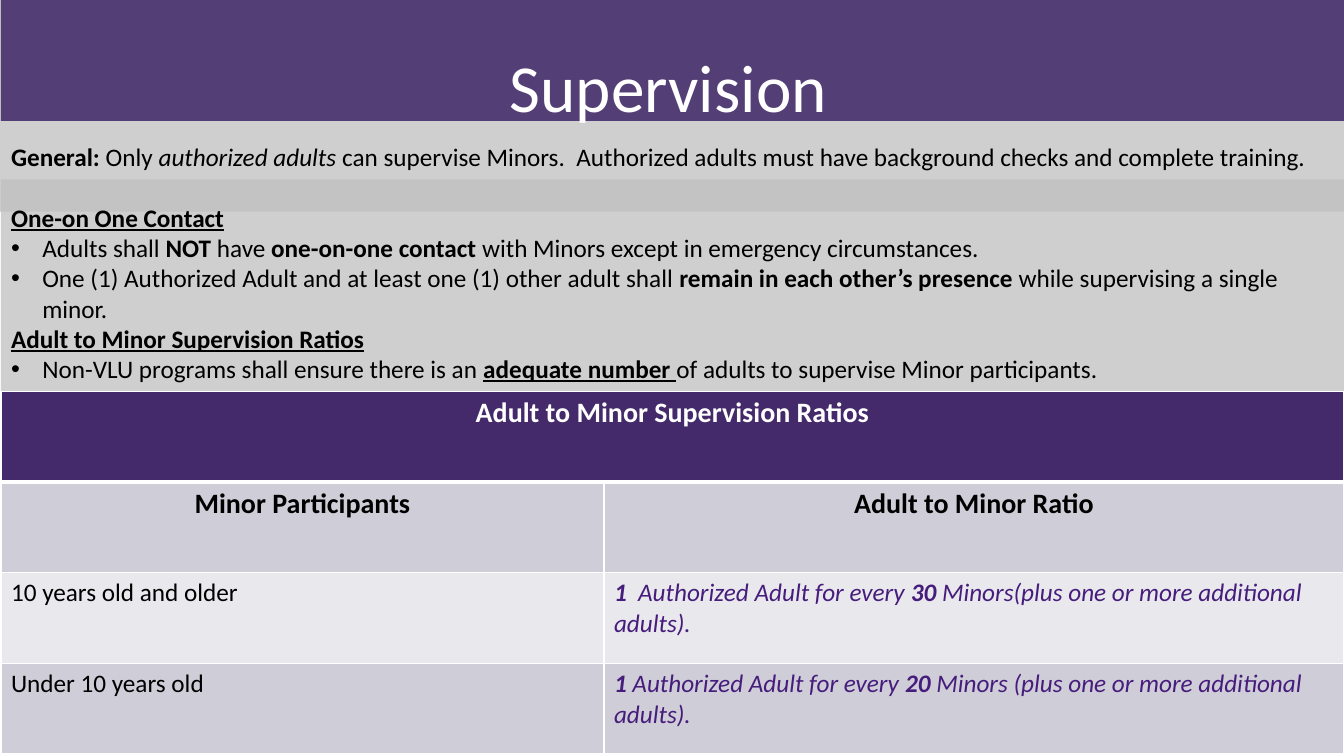
from lxml import etree
from pptx import Presentation
from pptx.dml.color import RGBColor
from pptx.enum.shapes import MSO_SHAPE as Preset
from pptx.enum.text import MSO_ANCHOR as Anchor, MSO_AUTO_SIZE as AutoSize, PP_ALIGN as Align
from pptx.oxml.ns import qn
from pptx.util import Pt

PX = 9144  # EMU per px, 100 px to the inch
FONT = "Calibri"
WHITE = RGBColor(0xFF, 0xFF, 0xFF)
BLACK = RGBColor(0, 0, 0)
GRAY = RGBColor(0xBF, 0xBF, 0xBF)
PURPLE = RGBColor(0x44, 0x2A, 0x6A)
VIOLET = RGBColor(0x46, 0x1D, 0x7C)
DARK_BAND = RGBColor(0xCF, 0xCD, 0xD7)
LIGHT_BAND = RGBColor(0xE9, 0xE8, 0xEC)

# left, top, width, height in px; fill; opacity in percent
PANELS = [
    ((1, 178, 1333, 571), GRAY, 75),
    ((0, 0, 1334, 210), GRAY, 75),
    ((1, -2, 1335, 122), PURPLE, 88),
]
TITLE = "Supervision"
TITLE_AT = (157, 39, 1012, 91)
BODY_AT = (1, 105, 1332, 283)
BODY_TOP_INSET = 35
BULLET_INDENT = 31

# Each run is (text, style letters): b bold, i italic, u underlined
# Each paragraph is (bulleted, points of space before, runs)
BODY = [
    (False, 0, [("General: ", "b"), ("Only ", ""), ("authorized adults ", "i"),
                ("can supervise Minors.  Authorized adults must have background checks "
                 "and complete training.", "")]),
    (False, 22, [("One-on One Contact", "bu")]),
    (True, 0, [("Adults shall ", ""), ("NOT ", "b"), ("have ", ""), ("one-on-one contact ", "b"),
               ("with Minors except in emergency circumstances.", "")]),
    (True, 0, [("One (1) Authorized Adult and at least one (1) other adult shall ", ""),
               ("remain in each other’s presence ", "b"),
               ("while supervising a single minor.", "")]),
    (False, 0, [("Adult to Minor Supervision Ratios", "bu")]),
    (True, 0, [("Non-VLU programs shall ensure there is an ", ""), ("adequate number ", "bu"),
               ("of adults to supervise Minor participants.", "")]),
]

TABLE_AT = (1, 388, 1332, 360)
COLUMN_WIDTHS = (598, 734)
HEADING_ROWS = 2
ROW_FILLS = (PURPLE, DARK_BAND, LIGHT_BAND, DARK_BAND)
RATIOS = [
    [[("Adult to Minor Supervision Ratios", "b")], []],
    [[("Minor Participants", "b")], [("Adult to Minor Ratio", "b")]],
    [[("10 years old and older", "")],
     [("1  ", "bi"), ("Authorized Adult for every ", "i"), ("30", "bi"),
      (" Minors(plus one or more additional adults).", "i")]],
    [[("Under 10 years old", "")],
     [("1 ", "bi"), ("Authorized Adult for every ", "i"), ("20 ", "bi"),
      ("Minors (plus one or more additional adults).", "i")]],
]


def to_emu(lengths):
    return [length * PX for length in lengths]


def add_runs(para, runs, size, color):
    for text, style in runs:
        span = para.add_run()
        span.text = text
        formats = {"name": FONT, "size": Pt(size), "bold": "b" in style,
                   "italic": "i" in style, "underline": "u" in style}
        for name, value in formats.items():
            setattr(span.font, name, value)
        span.font.color.rgb = color


def add_panel(slide, place, color, opacity):
    panel = slide.shapes.add_shape(Preset.RECTANGLE, *to_emu(place))
    panel.shadow.inherit = False
    panel.line.fill.background()
    panel.fill.solid()
    panel.fill.fore_color.rgb = color
    tint = panel.fill._xPr.find(f"{qn('a:solidFill')}/{qn('a:srgbClr')}")
    etree.SubElement(tint, qn("a:alpha"), val=str(opacity * 1000))


def place_in_front(box, place, anchor):
    """Move a placeholder to its place and above the panels."""
    box.left, box.top, box.width, box.height = to_emu(place)
    box.element.getparent().append(box.element)
    formats = {"word_wrap": True, "auto_size": AutoSize.NONE, "vertical_anchor": anchor}
    for name, value in formats.items():
        setattr(box.text_frame, name, value)
    return box.text_frame


def set_bullet(para, bulleted):
    indent = BULLET_INDENT * PX if bulleted else 0
    props = para._p.get_or_add_pPr()
    props.set("marL", str(indent))
    props.set("indent", str(-indent))
    if bulleted:
        etree.SubElement(props, qn("a:buFont"), typeface="Arial")
        etree.SubElement(props, qn("a:buChar"), char="•")
    else:
        etree.SubElement(props, qn("a:buNone"))


def fill_body(frame):
    frame.margin_top = BODY_TOP_INSET * PX
    for index, (bulleted, space, runs) in enumerate(BODY):
        para = frame.add_paragraph() if index else frame.paragraphs[0]
        para.alignment = Align.LEFT
        para.space_before = Pt(space)
        para.space_after = Pt(0)
        set_bullet(para, bulleted)
        add_runs(para, runs, 18, BLACK)


def set_borders(cell, widths):
    props = cell._tc.get_or_add_tcPr()
    for side, width in widths.items():
        line = etree.SubElement(props, qn(f"a:ln{side}"), w=str(Pt(width)))
        paint = etree.SubElement(line, qn("a:solidFill"))
        etree.SubElement(paint, qn("a:srgbClr"), val=str(WHITE))


def add_ratio_table(slide):
    frame = slide.shapes.add_table(len(RATIOS), len(COLUMN_WIDTHS), *to_emu(TABLE_AT))
    table = frame.table
    table.first_row = table.horz_banding = False
    for column, width in zip(table.columns, COLUMN_WIDTHS):
        column.width = width * PX
    for r, row in enumerate(RATIOS):
        heading = r < HEADING_ROWS
        for c, runs in enumerate(row):
            cell = table.cell(r, c)
            set_borders(cell, {"L": 1, "R": 1, "T": 3 if r == 1 else 1, "B": 3 if r == 0 else 1})
            cell.fill.solid()
            cell.fill.fore_color.rgb = ROW_FILLS[r]
            para = cell.text_frame.paragraphs[0]
            para.alignment = Align.CENTER if heading else Align.LEFT
            color = WHITE if r == 0 else BLACK if heading or c == 0 else VIOLET
            add_runs(para, runs, 20 if heading else 18, color)
    table.cell(0, 0).merge(table.cell(0, 1))


def main():
    deck = Presentation()
    deck.slide_width, deck.slide_height = to_emu((1333, 750))
    slide = deck.slides.add_slide(deck.slide_layouts[1])
    for panel in PANELS:
        add_panel(slide, *panel)
    title = place_in_front(slide.shapes.title, TITLE_AT, Anchor.MIDDLE)
    title.paragraphs[0].alignment = Align.CENTER
    add_runs(title.paragraphs[0], [(TITLE, "")], 48, WHITE)
    fill_body(place_in_front(slide.placeholders[1], BODY_AT, Anchor.TOP))
    add_ratio_table(slide)
    deck.save("out.pptx")


if __name__ == "__main__":
    main()
